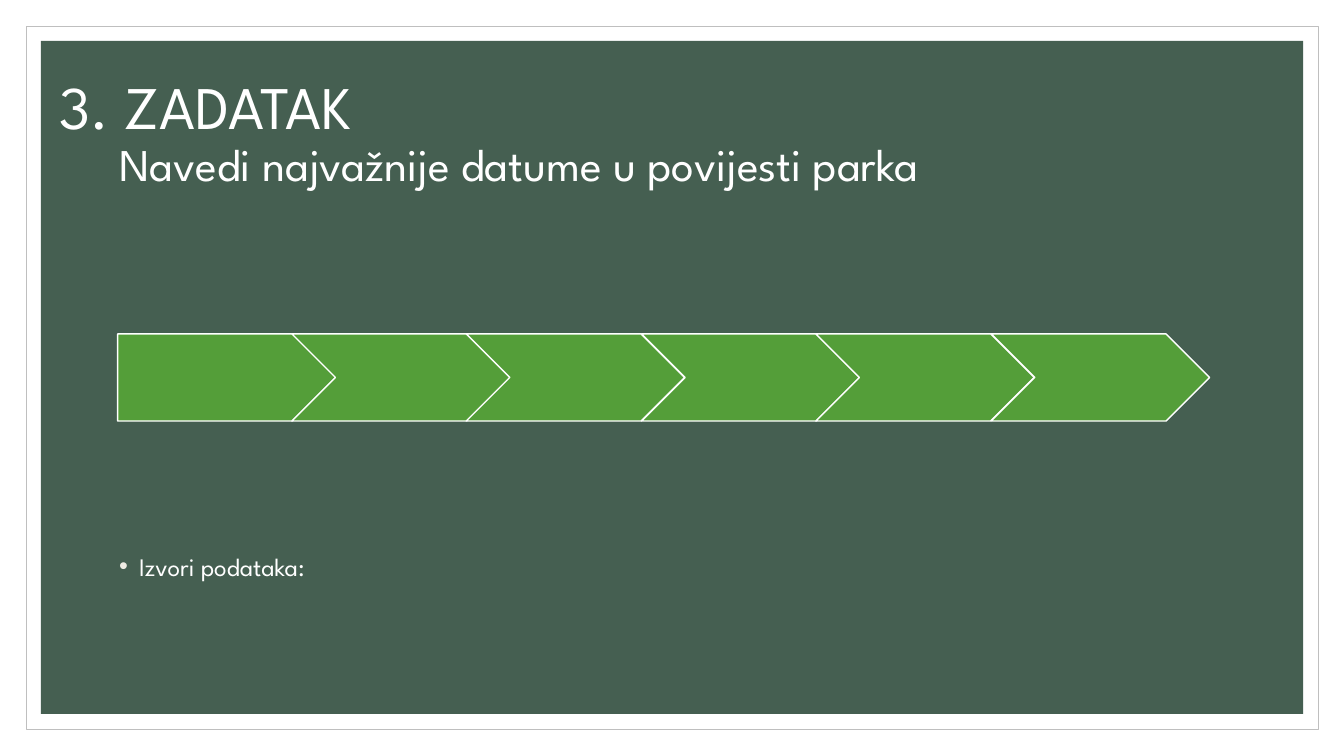
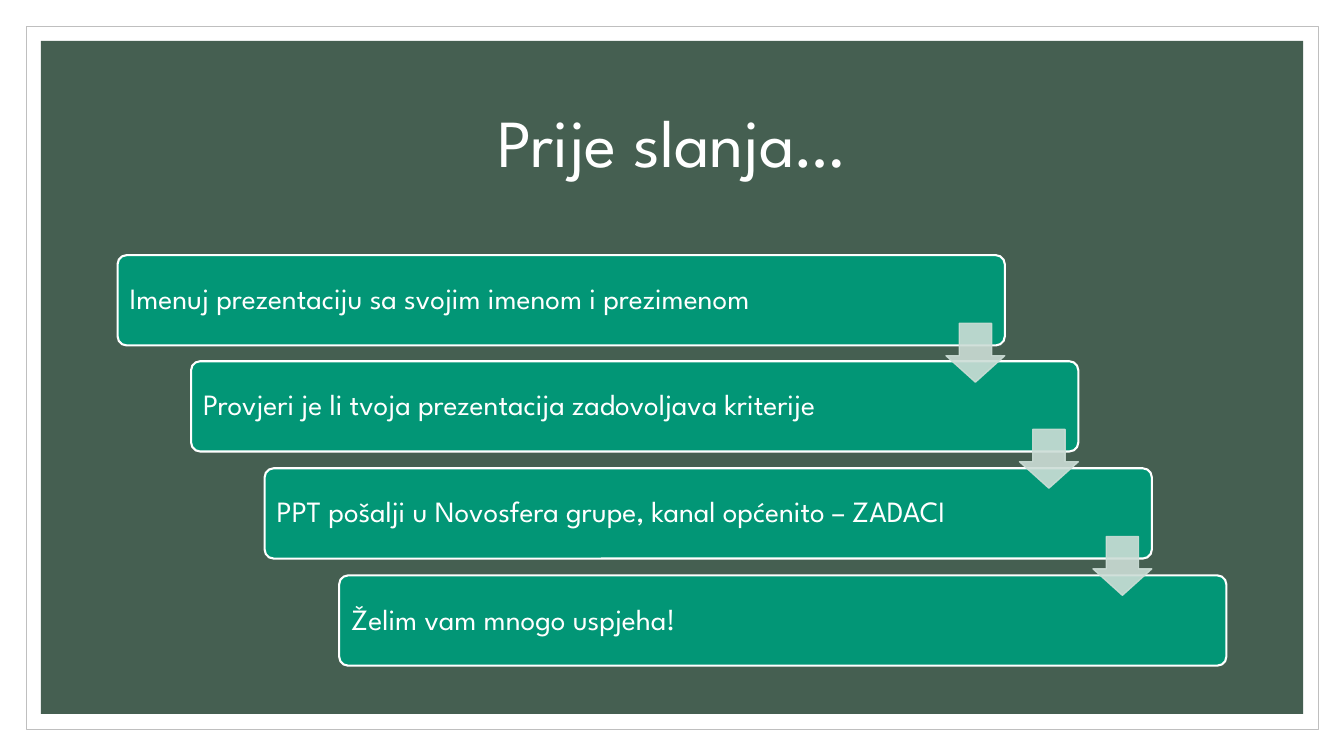
"""Builds two task slides: a timeline of park dates and the steps before handing in."""
from lxml import etree
from pptx import Presentation, util as u
from pptx.dml.color import RGBColor
from pptx.enum import shapes, text
from pptx.oxml.ns import qn

PX = 9525
FONT = "League Spartan"
WHITE = RGBColor(0xFF, 0xFF, 0xFF)
FRAME_GREY = RGBColor(0xBF, 0xBF, 0xBF)
PANEL_GREEN = RGBColor(0x45, 0x5F, 0x51)
DATE_GREEN = RGBColor(0x54, 0x9E, 0x39)
STEP_TEAL = RGBColor(0x02, 0x96, 0x76)
ARROW_MINT = RGBColor(0xCC, 0xDD, 0xD6)
BULLET_CREAM = "EEEBE3"
KIND = shapes.MSO_SHAPE


def add_block(slide, kind, box, fill, line=None, weight=1.0, adjustments=()):
    block = slide.shapes.add_shape(kind, *(n * PX for n in box))
    block.shadow.inherit = False
    block.fill.solid()
    block.fill.fore_color.rgb = fill
    if line is None:
        block.line.fill.background()
    else:
        block.line.color.rgb = line
        block.line.width = u.Pt(weight)
    for i, value in enumerate(adjustments):
        block.adjustments[i] = value
    return block


def write(holder, lines, anchor=text.MSO_ANCHOR.MIDDLE, align=text.PP_ALIGN.LEFT, spacing=0.9):
    frame = holder.text_frame
    frame.word_wrap = True
    frame.vertical_anchor = anchor
    for i, (words, size) in enumerate(lines):
        paragraph = frame.add_paragraph() if i else frame.paragraphs[0]
        paragraph.alignment = align
        paragraph.line_spacing = spacing
        run = paragraph.add_run()
        run.text = words
        run.font.name = FONT
        run.font.size = u.Pt(size)
        run.font.color.rgb = WHITE
    return frame


deck = Presentation()
deck.slide_width, deck.slide_height = 1280 * PX, 720 * PX
dates, handing_in = (deck.slides.add_slide(deck.slide_layouts[6]) for _ in range(2))
for slide in (dates, handing_in):
    add_block(slide, KIND.RECTANGLE, (25, 25, 1231, 670), WHITE, FRAME_GREY, 0.5)
    add_block(slide, KIND.RECTANGLE, (39, 39, 1202, 641), PANEL_GREEN)

task = dates.shapes.add_textbox(47 * PX, 56 * PX, 1184 * PX, 144 * PX)
heading = write(task, [("3. ZADATAK", 43.2), ("Navedi najvažnije datume u povijesti parka", 32.4)])
heading.paragraphs[1]._p.get_or_add_pPr().set("marL", str(57 * PX))

sources = dates.shapes.add_textbox(104 * PX, 520 * PX, 1056 * PX, 144 * PX)
source_list = write(sources, [("Izvori podataka:", 18)], text.MSO_ANCHOR.TOP, spacing=1.0)
source_line = source_list.paragraphs[0]
source_line.space_before = u.Pt(9)
bullet = source_line._p.get_or_add_pPr()
bullet.set("marL", str(19 * PX))
bullet.set("indent", str(-19 * PX))
bullet_color = etree.SubElement(bullet, qn("a:buClr"))
etree.SubElement(bullet_color, qn("a:srgbClr"), val=BULLET_CREAM)
etree.SubElement(bullet, qn("a:buFont"), typeface="Arial")
etree.SubElement(bullet, qn("a:buChar"), char="•")

for i in range(6):
    kind = KIND.CHEVRON if i else KIND.PENTAGON
    add_block(dates, kind, (112 + 832 * i // 5, 318, 208, 83), DATE_GREEN, WHITE)

title = handing_in.shapes.add_textbox(112 * PX, 67 * PX, 1056 * PX, 144 * PX)
write(title, [("Prije slanja…", 48)], align=text.PP_ALIGN.CENTER)

STEPS = (
    "Imenuj prezentaciju sa svojim imenom i prezimenom",
    "Provjeri je li tvoja prezentacija zadovoljava kriterije",
    "PPT pošalji u Novosfera grupe, kanal općenito – ZADACI",
    "Želim vam mnogo uspjeha!",
)
BAR_WIDTH, BAR_HEIGHT, ARROW = 845, 86, 56
corners = [(112 + 211 * i // 3, 243 + 305 * i // 3) for i in range(len(STEPS))]
for (left, top), step in zip(corners, STEPS):
    bar = add_block(handing_in, KIND.ROUNDED_RECTANGLE, (left, top, BAR_WIDTH, BAR_HEIGHT),
                    STEP_TEAL, WHITE, 1.5, (0.1,))
    write(bar, [(step, 21)]).margin_left = 9 * PX

for left, top in corners[:-1]:
    arrow = add_block(handing_in, KIND.DOWN_ARROW, (left + BAR_WIDTH - ARROW, top + 65, ARROW, ARROW),
                      ARROW_MINT, ARROW_MINT, 1, (0.55, 0.45))
    for color in arrow._element.spPr.iter(qn("a:srgbClr")):
        etree.SubElement(color, qn("a:alpha"), val="90000")

deck.save("out.pptx")
